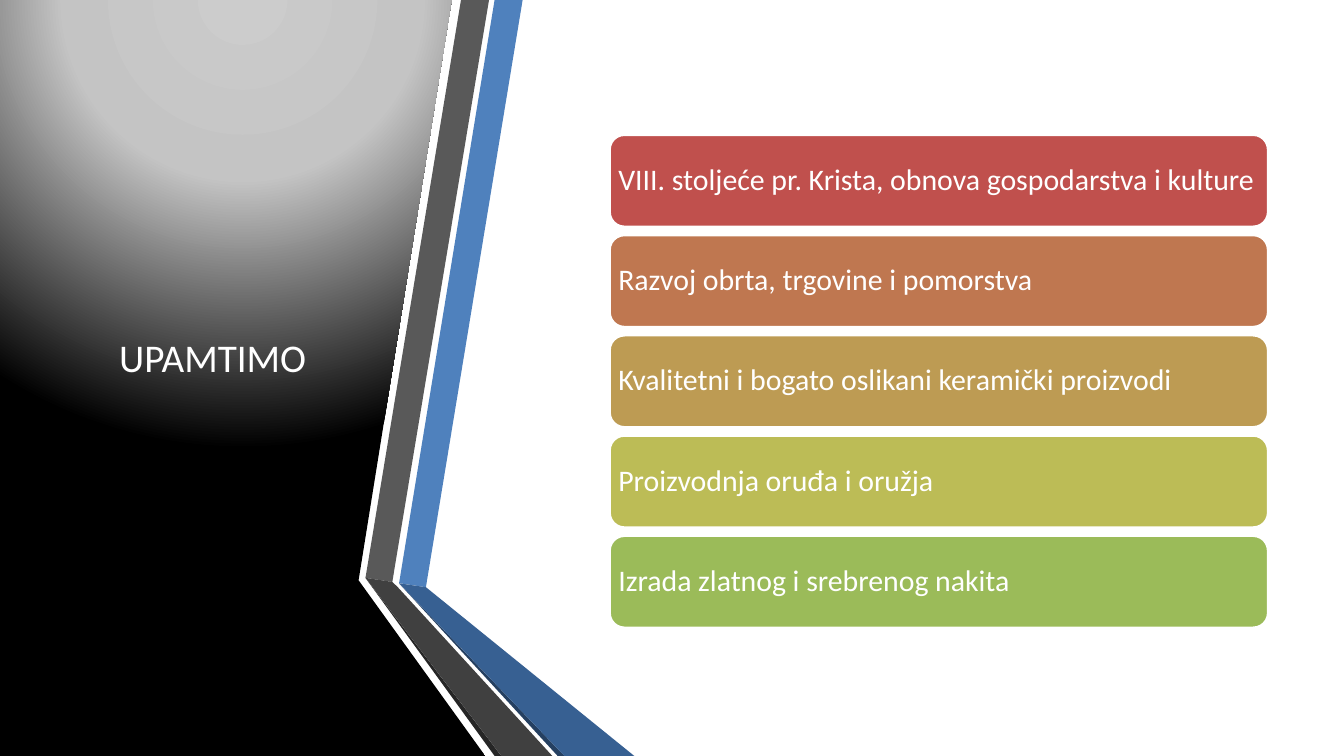
from dataclasses import dataclass

from lxml.etree import SubElement
from pptx import Presentation
from pptx.dml.color import RGBColor
from pptx.enum.shapes import MSO_SHAPE
from pptx.enum.text import MSO_ANCHOR, PP_ALIGN
from pptx.oxml.ns import qn
from pptx.shapes.autoshape import Shape
from pptx.slide import Slide
from pptx.util import Pt

COLOURS = {
    "white": "FFFFFF", "black": "000000",
    "light grey": "CCCCCC", "silver": "C4C4C4",
    "blue": "4F81BD", "deep blue": "376092", "navy": "254061",
    "grey": "595959", "dark grey": "404040", "charcoal": "262626",
    "red": "C0504D", "orange": "BF7750", "ochre": "BD9B53",
    "olive": "BCBC56", "green": "9BBB59",
}
FONT = "Calibri"
WIDTH, HEIGHT = 720, 405

# Corners where the ribbons bend
GREY_LEFT, GREY_RIGHT = (195.8, 309.6), (210.2, 311.8)
BLUE_LEFT, BLUE_RIGHT = (213.8, 312.5), (228.2, 314.6)

CARD_LEFT, CARD_TOP, CARD_WIDTH, CARD_HEIGHT = 326.2, 71.9, 353.5, 50
CARD_PITCH = 53.7
CARD_MARGIN = 2.6

Point = tuple[float, float]


@dataclass
class Polygon:
    colour: str
    points: list[Point]


@dataclass
class Card:
    colour: str
    text: str


PANEL = Polygon("black", [(190, 0), (242, 0), (192.2, 310.5), (192.2, 311),
                          (260, HEIGHT), (0, HEIGHT), (0, 0)])
RIBBONS = [
    Polygon("blue", [BLUE_LEFT, BLUE_RIGHT, (280, 0), (265, 0)]),
    Polygon("grey", [(262, 0), (247, 0), GREY_LEFT, GREY_RIGHT]),
    Polygon("charcoal", [GREY_LEFT, (265, HEIGHT), (268.6, HEIGHT)]),
    Polygon("navy", [BLUE_LEFT, (298.8, HEIGHT), (302.4, HEIGHT)]),
    Polygon("deep blue", [BLUE_LEFT, (302.4, HEIGHT), (339.8, HEIGHT), BLUE_RIGHT]),
    Polygon("dark grey", [(295.9, HEIGHT), (213.1, 314.6), GREY_RIGHT,
                          GREY_LEFT, (268.6, HEIGHT)]),
]
CARDS = [
    Card("red", "VIII. stoljeće pr. Krista, obnova gospodarstva i kulture"),
    Card("orange", "Razvoj obrta, trgovine i pomorstva"),
    Card("ochre", "Kvalitetni i bogato oslikani keramički proizvodi"),
    Card("olive", "Proizvodnja oruđa i oružja"),
    Card("green", "Izrada zlatnog i srebrenog nakita"),
]


def colour_of(name: str) -> RGBColor:
    return RGBColor.from_string(COLOURS[name])


def fill_shape(shape: Shape, colour: str) -> None:
    shape.shadow.inherit = False
    shape.fill.solid()
    shape.fill.fore_color.rgb = colour_of(colour)


def draw_polygon(page: Slide, polygon: Polygon) -> Shape:
    start, *others = [(Pt(x), Pt(y)) for x, y in polygon.points]
    builder = page.shapes.build_freeform(*start)
    builder.add_line_segments(others, close=True)
    shape = builder.convert_to_shape()
    fill_shape(shape, polygon.colour)
    shape.line.fill.background()
    return shape


def add_spotlight(shape: Shape) -> None:
    """Replace the solid fill by a circular gradient centred above the shape."""
    properties = shape.fill._xPr
    solid = properties.find(qn("a:solidFill"))
    gradient = solid.makeelement(qn("a:gradFill"), {"rotWithShape": "1"})
    properties.replace(solid, gradient)
    stops = SubElement(gradient, qn("a:gsLst"))
    for percent, name in ((0, "light grey"), (40, "silver"), (100, "black")):
        stop = SubElement(stops, qn("a:gs"), pos=str(percent * 1000))
        SubElement(stop, qn("a:srgbClr"), val=COLOURS[name])
    circle = SubElement(gradient, qn("a:path"), {"path": "circle"})
    SubElement(circle, qn("a:fillToRect"), l="50000", t="-80000", r="50000", b="180000")


def write_text(shape: Shape, text: str, size: float, align: PP_ALIGN) -> None:
    frame = shape.text_frame
    frame.text = text
    frame.word_wrap = True
    frame.vertical_anchor = MSO_ANCHOR.MIDDLE
    para = frame.paragraphs[0]
    para.alignment = align
    para.font.name = FONT
    for span in para.runs:
        span.font.name = FONT
        span.font.size = Pt(size)
        span.font.color.rgb = colour_of("white")


def draw_title(page: Slide, text: str) -> None:
    oval = page.shapes.add_shape(MSO_SHAPE.OVAL, Pt(32), Pt(40.3), Pt(164), Pt(302))
    oval.shadow.inherit = False
    oval.fill.background()
    oval.line.fill.background()
    write_text(oval, text, 21, PP_ALIGN.CENTER)


def draw_card(page: Slide, card: Card, top: float) -> None:
    box = page.shapes.add_shape(MSO_SHAPE.ROUNDED_RECTANGLE, Pt(CARD_LEFT), Pt(top),
                                Pt(CARD_WIDTH), Pt(CARD_HEIGHT))
    fill_shape(box, card.colour)
    box.line.color.rgb = colour_of("white")
    box.line.width = Pt(2)
    write_text(box, card.text, 16, PP_ALIGN.LEFT)
    frame = box.text_frame
    frame.margin_left = frame.margin_right = Pt(CARD_MARGIN)
    frame.margin_top = frame.margin_bottom = Pt(CARD_MARGIN)
    frame.paragraphs[0].line_spacing = 0.9


def main() -> None:
    deck = Presentation()
    deck.slide_width, deck.slide_height = Pt(WIDTH), Pt(HEIGHT)
    page = deck.slides.add_slide(deck.slide_layouts[6])
    add_spotlight(draw_polygon(page, PANEL))
    for ribbon in RIBBONS:
        draw_polygon(page, ribbon)
    draw_title(page, "UPAMTIMO")
    for index, card in enumerate(CARDS):
        draw_card(page, card, CARD_TOP + index * CARD_PITCH)
    deck.save("out.pptx")


if __name__ == "__main__":
    main()
